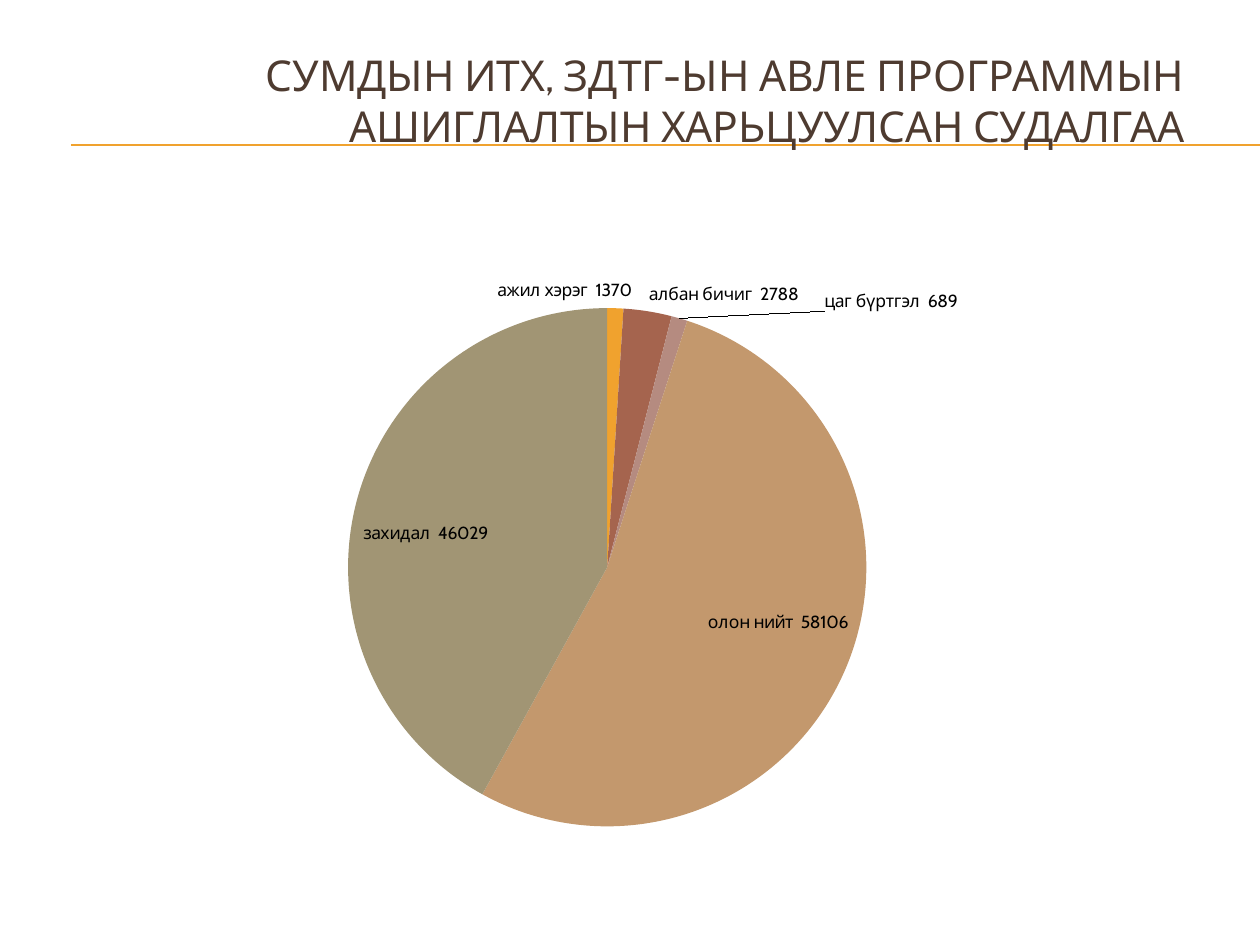
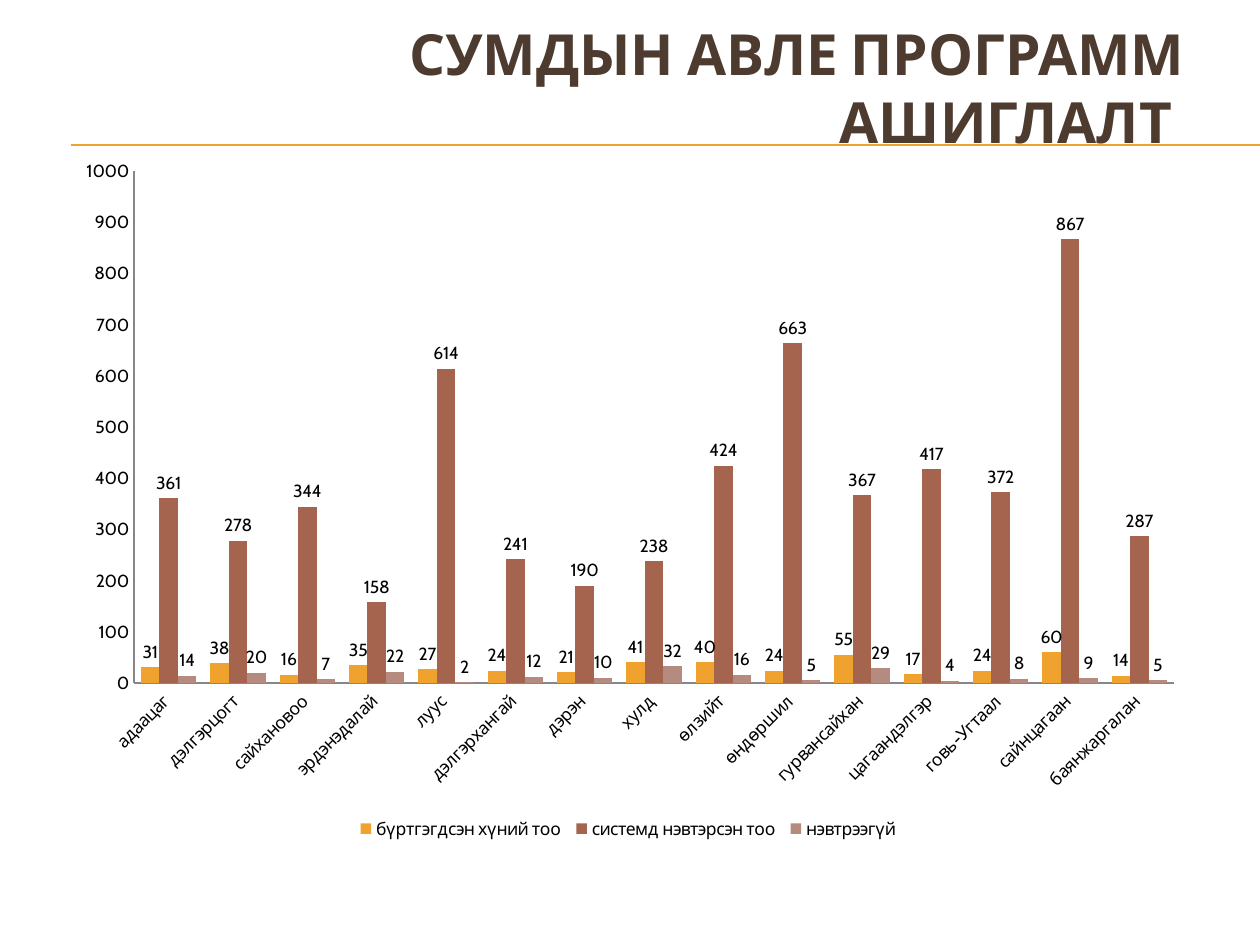
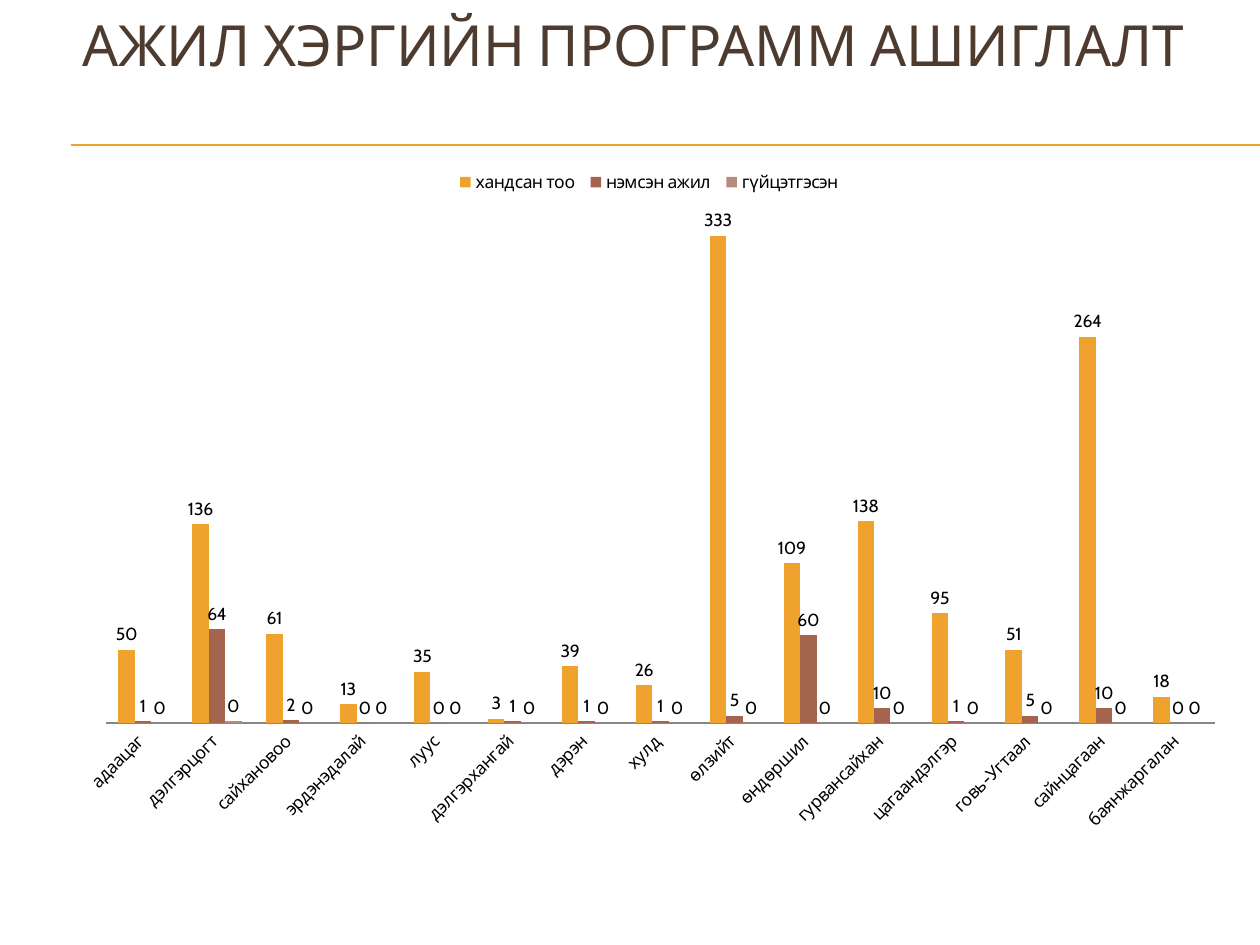
from lxml import etree
from pptx import Presentation
from pptx.chart.data import CategoryChartData
from pptx.dml.color import RGBColor
from pptx.enum import chart as ch, shapes, text
from pptx.oxml import ns
from pptx.util import Pt

# Shared look
GOLD = RGBColor(0xF0, 0xA2, 0x2E)
RUST = RGBColor(0xA5, 0x64, 0x4E)
ROSE = RGBColor(0xB5, 0x8B, 0x80)
TAN = RGBColor(0xC3, 0x98, 0x6D)
OLIVE = RGBColor(0xA1, 0x95, 0x74)
BROWN = RGBColor(0x4E, 0x3B, 0x30)
GREY = RGBColor(0x87, 0x87, 0x87)
BLACK = RGBColor(0, 0, 0)
TONES = [GOLD, RUST, ROSE, TAN, OLIVE]
FONT = "Cabin"
WIDE, HIGH = 720, 540

# Data
USES = {"ажил хэрэг": 1370, "албан бичиг": 2788, "цаг бүртгэл": 689,
        "олон нийт": 58106, "захидал": 46029}
# Label shifts as fractions of the chart: point -> (x, y)
MOVES = {0: (-0.05, 0), 2: (0.14, 0), 3: (0.01, -0.06), 4: (0, 0.03)}
SUMS = ["адаацаг", "дэлгэрцогт", "сайхановоо", "эрдэнэдалай", "луус",
        "дэлгэрхангай", "дэрэн", "хулд", "өлзийт", "өндөршил",
        "гурвансайхан", "цагаандэлгэр", "говь-Угтаал", "сайнцагаан",
        "баянжаргалан"]
LOGINS = {
    "бүртгэгдсэн хүний тоо":
        [31, 38, 16, 35, 27, 24, 21, 41, 40, 24, 55, 17, 24, 60, 14],
    "системд нэвтэрсэн тоо":
        [361, 278, 344, 158, 614, 241, 190, 238, 424, 663, 367, 417, 372,
         867, 287],
    "нэвтрээгүй": [14, 20, 7, 22, 2, 12, 10, 32, 16, 5, 29, 4, 8, 9, 5],
}
TASKS = {
    "хандсан тоо":
        [50, 136, 61, 13, 35, 3, 39, 26, 333, 109, 138, 75, 50, 264, 18],
    "нэмсэн ажил": [1, 64, 2, 0, 0, 1, 1, 1, 5, 60, 10, 1, 5, 10, 0],
    "гүйцэтгэсэн": [0, 1] + [0] * 13,
}
# Labels that differ from the bar: (series, point) -> text
FIXES = {(0, 11): "95", (0, 12): "51", (2, 1): "0"}


def style(font, size, tone):
    font.name = FONT
    font.size = Pt(size)
    font.color.rgb = tone


def place(owner, spot, **sizes):
    """Give a chart part a manual layout, in fractions of the chart."""
    for old in owner.findall(ns.qn("c:layout")):
        owner.remove(old)
    lay = etree.Element(ns.qn("c:layout"))
    man = etree.SubElement(lay, ns.qn("c:manualLayout"))
    for tag, val in sizes.items():
        etree.SubElement(man, ns.qn("c:" + tag)).set("val", str(val))
    owner.insert(spot, lay)


def frame(chart, box, area):
    """Set the plot area, given in points from the corner of the box."""
    wide, high = box[2:]
    x, y, w, h = area
    place(chart._chartSpace.chart.plotArea, 0,
          layoutTarget="inner", xMode="edge", yMode="edge",
          x=x / wide, y=y / high, w=w / wide, h=h / high)


def tag(point, words, spot):
    label = point.data_label
    label.text_frame.text = words
    style(label.text_frame.paragraphs[0].runs[0].font, 10, BLACK)
    label.position = spot


def rules(slide):
    for y in (82.8, 83.1):
        line = slide.shapes.add_connector(
            shapes.MSO_CONNECTOR.STRAIGHT, Pt(40.5), Pt(y), Pt(WIDE), Pt(y))
        line.line.color.rgb = GOLD
        line.line.width = Pt(0.75)
        etree.SubElement(line._element.spPr, ns.qn("a:effectLst"))


def title(slide, words, box, size, bold=False):
    shape = slide.shapes.add_textbox(*map(Pt, box))
    body = shape.text_frame
    body.word_wrap = True
    body.margin_top = body.margin_bottom = 0
    body.vertical_anchor = text.MSO_ANCHOR.TOP
    body.text = words
    para = body.paragraphs[0]
    para.alignment = text.PP_ALIGN.RIGHT
    style(para.runs[0].font, size, BROWN)
    para.runs[0].font.bold = bold


def graph(slide, kind, names, rows, box, area):
    data = CategoryChartData()
    data.categories = [name + " " for name in names]
    for name, vals in rows.items():
        data.add_series(name + " ", vals)
    chart = slide.shapes.add_chart(kind, *map(Pt, box), data).chart
    chart.has_title = False
    chart.has_legend = False
    style(chart.font, 10, BLACK)
    frame(chart, box, area)
    return chart


def pie(slide, box, area):
    total = sum(USES.values())
    parts = [round(100 * n / total) for n in USES.values()]
    chart = graph(slide, ch.XL_CHART_TYPE.PIE, USES, {"Series 1": parts},
                  box, area)
    row = chart.plots[0].series[0]
    spots = ch.XL_LABEL_POSITION
    for i, (name, count) in enumerate(USES.items()):
        point = row.points[i]
        point.format.fill.solid()
        point.format.fill.fore_color.rgb = TONES[i]
        spot = spots.OUTSIDE_END if parts[i] < 10 else spots.INSIDE_END
        tag(point, f"{name}  {count}", spot)
    # Keep neighbouring labels apart
    for i, (x, y) in MOVES.items():
        label = row._element.xpath(f"c:dLbls/c:dLbl[c:idx/@val='{i}']")[0]
        place(label, 1, x=x, y=y)


def bars(slide, rows, box, area, gap, top, side, scale=True, fixes=None):
    chart = graph(slide, ch.XL_CHART_TYPE.COLUMN_CLUSTERED, SUMS, rows,
                  box, area)
    chart.has_legend = True
    chart.legend.position = side
    chart.legend.include_in_layout = False
    style(chart.legend.font, 10, BLACK)

    # Axes
    for axis in (chart.category_axis, chart.value_axis):
        axis.has_major_gridlines = False
        axis.major_tick_mark = ch.XL_TICK_MARK.NONE
        axis.minor_tick_mark = ch.XL_TICK_MARK.NONE
        axis.format.line.color.rgb = GREY
        style(axis.tick_labels.font, 10, BLACK)
    turn = chart.category_axis._element.xpath("c:txPr/a:bodyPr")[0]
    turn.set("rot", "-2700000")
    chart.value_axis.minimum_scale = 0
    chart.value_axis.maximum_scale = top
    chart.value_axis.visible = scale

    # Columns and their labels
    plot = chart.plots[0]
    plot.gap_width = gap
    plot.overlap = 0
    plot.vary_by_categories = False
    spot = ch.XL_LABEL_POSITION.OUTSIDE_END
    for row, tone in zip(plot.series, TONES):
        row.format.fill.solid()
        row.format.fill.fore_color.rgb = tone
        labels = row.data_labels
        labels.show_value = True
        labels.position = spot
        style(labels.font, 10, BLACK)
    for (i, j), words in (fixes or {}).items():
        tag(plot.series[i].points[j], words, spot)


def main():
    deck = Presentation()
    deck.slide_width, deck.slide_height = Pt(WIDE), Pt(HIGH)
    pages = [deck.slides.add_slide(deck.slide_layouts[6]) for _ in range(3)]
    for page in pages:
        rules(page)
    uses, logins, tasks = pages
    sides = ch.XL_LEGEND_POSITION

    title(uses, "СУМДЫН ИТХ, ЗДТГ-ЫН АВЛЕ ПРОГРАММЫН АШИГЛАЛТЫН "
          "ХАРЬЦУУЛСАН СУДАЛГАА", (36, 28.2, 648, 60), 24.3)
    pie(uses, (68.4, 149.8, 583.2, 332.6), (130.5, 26.3, 296.2, 296.2))

    title(logins, "СУМДЫН АВЛЕ ПРОГРАММ АШИГЛАЛТ ",
          (36, 10.8, 648, 78), 32.4, True)
    bars(logins, LOGINS, (36, 84.2, 648, 398.2), (40.6, 13.5, 594.3, 292.6),
         75, 1000, sides.BOTTOM)

    title(tasks, "АЖИЛ ХЭРГИЙН ПРОГРАММ АШИГЛАЛТ",
          (36, 5.4, 648, 45), 32.4)
    bars(tasks, TASKS, (36, 90, 671.8, 392.4), (24.6, 30.6, 633.7, 292.6),
         150, 350, sides.TOP, False, FIXES)
    deck.save("out.pptx")


if __name__ == "__main__":
    main()
